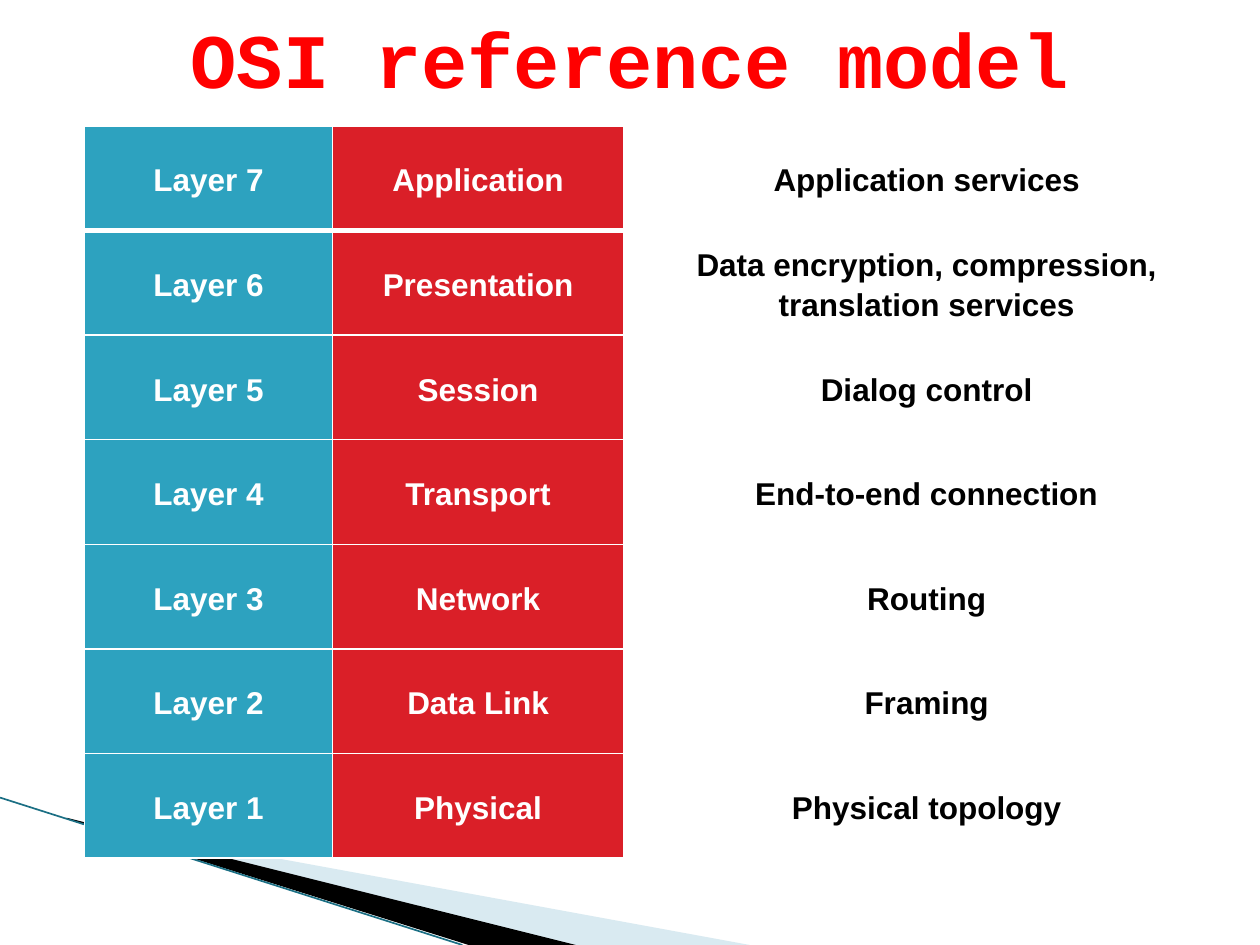
import dataclasses

import lxml.etree
import pptx
import pptx.dml.color
import pptx.enum.shapes
import pptx.enum.text
import pptx.oxml
import pptx.oxml.ns
import pptx.util

Inches = pptx.util.Inches
Pt = pptx.util.Pt
qn = pptx.oxml.ns.qn


@dataclasses.dataclass(frozen=True)
class Theme:
    white: str = "FFFFFF"
    black: str = "000000"
    title: str = "FF0000"
    number: str = "2DA2BF"
    name: str = "DA1F28"
    pale: str = "A0CBDC"
    edge: str = "1B6F84"
    title_font: str = "Courier New"
    body_font: str = "Arial"
    title_size: int = 44
    body_size: int = 18


LAYERS = [
    ("Application", "Application services"),
    ("Presentation", "Data encryption, compression, translation services"),
    ("Session", "Dialog control"),
    ("Transport", "End-to-end connection"),
    ("Network", "Routing"),
    ("Data Link", "Framing"),
    ("Physical", "Physical topology"),
]


def rgb(color):
    return pptx.dml.color.RGBColor.from_string(color)


def write_text(tf, text, *, font, size, color, spacing=1.0):
    """Fill a text frame with one bold, centred paragraph."""
    p = tf.paragraphs[0]
    p.alignment = pptx.enum.text.PP_ALIGN.CENTER
    p.line_spacing = spacing
    r = p.add_run()
    r.text = text
    r.font.name = font
    r.font.size = Pt(size)
    r.font.bold = True
    r.font.color.rgb = rgb(color)


def set_borders(cell, color, widths):
    """Draw cell borders; widths maps side letters L, R, T, B to points."""
    tc_pr = cell._tc.get_or_add_tcPr()
    for side, width in widths.items():
        ln = lxml.etree.SubElement(tc_pr, qn(f"a:ln{side}"), w=str(Pt(width)))
        fill = lxml.etree.SubElement(ln, qn("a:solidFill"))
        lxml.etree.SubElement(fill, qn("a:srgbClr"), val=color)


class SlideBuilder:
    def __init__(self, prs, theme):
        self.theme = theme
        self.s = prs.slides.add_slide(prs.slide_layouts[5])

    def title(self, text, left, top, width, height):
        sp = self.s.shapes.title
        sp.left, sp.top = Inches(left), Inches(top)
        sp.width, sp.height = Inches(width), Inches(height)
        tf = sp.text_frame
        tf.word_wrap = True
        tf.vertical_anchor = pptx.enum.text.MSO_ANCHOR.MIDDLE
        write_text(tf, text, font=self.theme.title_font,
                   size=self.theme.title_size, color=self.theme.title)

    def wedge(self, points, color, opacity=100):
        start, *rest = [(Inches(x), Inches(y)) for x, y in points]
        builder = self.s.shapes.build_freeform(*start)
        builder.add_line_segments(rest, close=True)
        sp = builder.convert_to_shape()
        sp.shadow.inherit = False
        sp.line.fill.background()
        sp.fill.solid()
        sp.fill.fore_color.rgb = rgb(color)
        if opacity < 100:
            clr = sp._element.spPr.find(qn("a:solidFill")).find(qn("a:srgbClr"))
            lxml.etree.SubElement(clr, qn("a:alpha"), val=str(opacity * 1000))

    def line(self, x1, y1, x2, y2, color, width):
        sp = self.s.shapes.add_connector(
            pptx.enum.shapes.MSO_CONNECTOR.STRAIGHT,
            Inches(x1), Inches(y1), Inches(x2), Inches(y2))
        sp.line.color.rgb = rgb(color)
        sp.line.width = Pt(width)
        lxml.etree.SubElement(sp._element.spPr, qn("a:effectLst"))

    def table(self, rows, left, top, col_widths, row_height, col_styles):
        """Add a table; col_styles gives a (fill, text colour) per column."""
        table = self.s.shapes.add_table(
            len(rows), len(col_widths), Inches(left), Inches(top),
            Inches(sum(col_widths)), Inches(row_height * len(rows))).table
        for col, width in zip(table.columns, col_widths):
            col.width = Inches(width)
        for i, row in enumerate(rows):
            for j, (text, (fill, color)) in enumerate(zip(row, col_styles)):
                widths = {"L": 1, "R": 1, "T": 3 if i == 1 else 1,
                          "B": 3 if i == 0 else 1}
                self.cell(table.cell(i, j), text, fill, color, widths)

    def cell(self, cell, text, fill, color, widths):
        cell.margin_left = cell.margin_right = Inches(0.07)
        cell.margin_top = cell.margin_bottom = 0
        cell.vertical_anchor = pptx.enum.text.MSO_ANCHOR.MIDDLE
        set_borders(cell, self.theme.white, widths)
        cell.fill.solid()
        cell.fill.fore_color.rgb = rgb(fill)
        write_text(cell.text_frame, text, font=self.theme.body_font,
                   size=self.theme.body_size, color=color, spacing=1.15)


def main():
    prs = pptx.Presentation()
    prs.slide_width, prs.slide_height = Inches(10), Inches(7.5)
    theme = Theme()
    slide = SlideBuilder(prs, theme)

    slide.wedge([(0.55, 6.51), (5.95, 7.5), (4.56, 7.5), (0.55, 6.5)],
                theme.pale, opacity=40)
    slide.wedge([(0.53, 6.49), (4.57, 7.5), (3.72, 7.5), (0.54, 6.5)],
                theme.black)
    slide.line(0, 6.33, 3.67, 7.5, theme.edge, 0.95)

    slide.title("OSI reference model", 0.5, 0, 9, 0.92)
    rows = [(f"Layer {len(LAYERS) - i}", *layer)
            for i, layer in enumerate(LAYERS)]
    slide.table(rows, 0.67, 1, [1.97, 2.31, 4.81], 0.83,
                [(theme.number, theme.white), (theme.name, theme.white),
                 (theme.white, theme.black)])
    prs.save("out.pptx")


if __name__ == "__main__":
    main()
